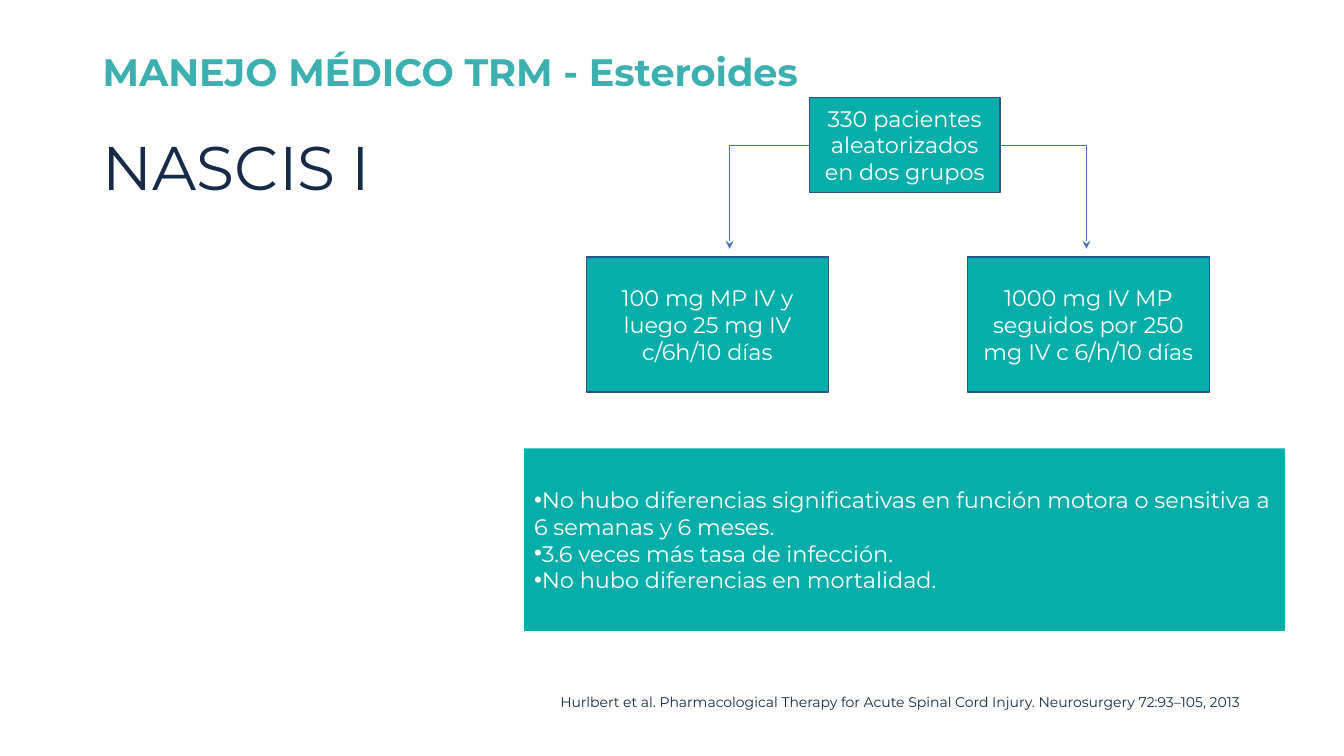
from lxml.etree import SubElement
from pptx import Presentation
from pptx.dml.color import RGBColor
from pptx.enum.shapes import MSO_CONNECTOR, MSO_SHAPE
from pptx.enum.text import MSO_ANCHOR, PP_ALIGN
from pptx.oxml.ns import qn
from pptx.util import Cm, Pt

FONT = "Montserrat"
TEAL, TITLE, NAVY = "06AEAA", "3CB0B0", "152B48"
EDGE, ARROW, WHITE = "31538F", "4472C4", "FFFFFF"


def tint(value):
    return RGBColor.from_string(value)


def bullet(par):
    """Give the paragraph a white round bullet hanging left of its text."""
    props = par._p.get_or_add_pPr()
    props.set("marL", "0")
    props.set("indent", str(int(Cm(-0.28))))
    shade = SubElement(props, qn("a:buClr"))
    SubElement(shade, qn("a:srgbClr")).set("val", WHITE)
    SubElement(props, qn("a:buFont")).set("typeface", "Arial")
    SubElement(props, qn("a:buChar")).set("char", "•")


def write(shape, lines, size=16, color=WHITE, bold=False, align=PP_ALIGN.LEFT,
          anchor=MSO_ANCHOR.MIDDLE, space=None, dots=False):
    frame = shape.text_frame
    frame.word_wrap = True
    frame.vertical_anchor = anchor
    frame.text = "\n".join(lines)
    for par in frame.paragraphs:
        par.alignment = align
        if space:
            par.line_spacing = space
        if dots:
            bullet(par)
        for run in par.runs:
            font = run.font
            font.name, font.size, font.bold = FONT, Pt(size), bold
            font.color.rgb = tint(color)


class Deck:
    def __init__(self):
        self.show = Presentation()
        self.show.slide_width, self.show.slide_height = Cm(33.87), Cm(19.05)
        self.slide = self.show.slides.add_slide(self.show.slide_layouts[6])

    def label(self, place, text, **style):
        box = self.slide.shapes.add_textbox(*map(Cm, place))
        write(box, [text], **style)

    def panel(self, place, lines, edge=None, **style):
        box = self.slide.shapes.add_shape(MSO_SHAPE.RECTANGLE, *map(Cm, place))
        box.shadow.inherit = False
        box.fill.solid()
        box.fill.fore_color.rgb = tint(TEAL)
        if edge:
            box.line.color.rgb = tint(edge)
            box.line.width = Pt(1)
        else:
            box.line.fill.background()
        write(box, lines, **style)

    def elbow(self, start, end):
        """Draw an arrow that runs sideways, then down."""
        link = self.slide.shapes.add_connector(
            MSO_CONNECTOR.ELBOW, *map(Cm, start + end))
        link.line.color.rgb = tint(ARROW)
        link.line.width = Pt(0.75)
        props = link._element.spPr
        props.find(qn("a:prstGeom")).set("prst", "bentConnector2")
        SubElement(link.line._get_or_add_ln(), qn("a:tailEnd")).set("type", "stealth")
        SubElement(props, qn("a:effectLst"))


def main():
    deck = Deck()
    deck.label((2.34, 2.46, 29.21, 3.68), "NASCIS I", size=44, color=NAVY, space=0.9)

    left, top, width, height = 20.4, 2.46, 4.8, 2.39
    deck.panel((left, top, width, height), ["330 pacientes aleatorizados en dos grupos"],
               edge=EDGE, align=PP_ALIGN.CENTER)
    groups = [
        (14.78, left, 18.39, "100 mg MP IV y luego 25 mg IV c/6h/10 días"),
        (24.38, left + width, 27.38, "1000 mg IV MP seguidos por 250 mg IV c 6/h/10 días"),
    ]
    for side, start, tip, dose in groups:
        deck.elbow((start, top + height / 2), (tip, 6.27))
        deck.panel((side, 6.48, 6.1, 3.4), [dose], edge=EDGE, align=PP_ALIGN.CENTER)

    deck.panel((13.21, 11.3, 19.18, 4.6), [
        "No hubo diferencias significativas en función motora o sensitiva a "
        "6 semanas y 6 meses.",
        "3.6 veces más tasa de infección.",
        "No hubo diferencias en mortalidad.",
    ], dots=True)
    deck.label((13.87, 17.35, 25.4, 0.69),
               "Hurlbert et al. Pharmacological Therapy for Acute Spinal Cord Injury. "
               "Neurosurgery 72:93–105, 2013",
               size=10, color=NAVY, anchor=MSO_ANCHOR.TOP)
    deck.label((2.34, 0.28, 28.02, 3.18), "MANEJO MÉDICO TRM - Esteroides",
               size=27.3, color=TITLE, bold=True, space=0.9)
    deck.show.save("out.pptx")


if __name__ == "__main__":
    main()
